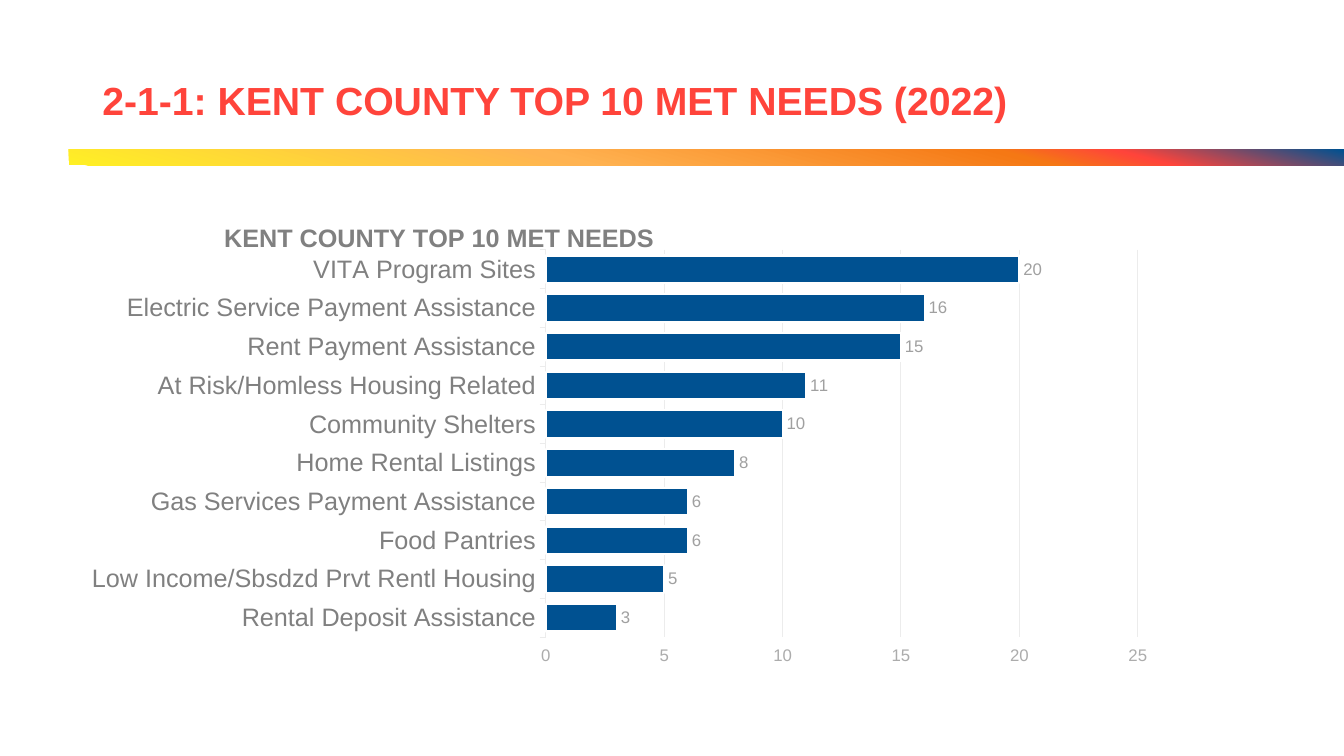
import pptx
import pptx.chart.data
import pptx.dml.color
import pptx.enum.chart
import pptx.enum.shapes
import pptx.enum.text
import pptx.oxml
import pptx.oxml.ns
import pptx.util

Pt = pptx.util.Pt
qn = pptx.oxml.ns.qn
COLORS = {
    "yellow": "FFF025", "peach": "FFB351", "orange": "F57814", "red": "FF443B",
    "blue": "005191", "gray": "808080", "label": "A0A0A0", "tick": "ACACAC",
    "grid": "ECECEC", "white": "FFFFFF",
}
NS = pptx.oxml.ns.nsdecls("a", "c")


def rgb(name):
    return pptx.dml.color.RGBColor.from_string(COLORS[name])


def set_font(font, size, color, bold=False):
    font.name = "Arial"
    font.size = Pt(size)
    font.bold = bold
    font.color.rgb = rgb(color)


prs = pptx.Presentation()
prs.slide_width, prs.slide_height = Pt(960), Pt(540)
s = prs.slides.add_slide(prs.slide_layouts[6])

# Gradient band
band = s.shapes.add_shape(pptx.enum.shapes.MSO_SHAPE.RECTANGLE,
                          Pt(49), Pt(107), Pt(911), Pt(11))
band.shadow.inherit = False
band.line.fill.background()
band.fill.gradient()
band.fill.gradient_angle = 75
gs_list = band._element.spPr.find(".//" + qn("a:gsLst"))
for gs in list(gs_list):
    gs_list.remove(gs)
for pos, color in [(0, "yellow"), (39, "peach"), (74, "orange"), (83, "red"), (100, "blue")]:
    gs_list.append(pptx.oxml.parse_xml(
        f'<a:gs {NS} pos="{pos * 1000}"><a:srgbClr val="{COLORS[color]}"/></a:gs>'))

# Slide title
title = s.shapes.add_textbox(Pt(66), Pt(29), Pt(894), Pt(88.5))
tf = title.text_frame
tf.word_wrap = True
tf.vertical_anchor = pptx.enum.text.MSO_ANCHOR.MIDDLE
p = tf.paragraphs[0]
p.text = "2-1-1: KENT COUNTY TOP 10 MET NEEDS (2022)"
p.line_spacing = 0.9
set_font(p.runs[0].font, 28, "red", True)

# Bar chart of met needs
needs = [
    ("Rental Deposit Assistance", 3),
    ("Low Income/Sbsdzd Prvt Rentl Housing", 5),
    ("Food Pantries", 6),
    ("Gas Services Payment Assistance", 6),
    ("Home Rental Listings", 8),
    ("Community Shelters", 10),
    ("At Risk/Homless Housing Related", 11),
    ("Rent Payment Assistance", 15),
    ("Electric Service Payment Assistance", 16),
    ("VITA Program Sites", 20),
]
data = pptx.chart.data.CategoryChartData()
data.categories = [need for need, count in needs]
data.add_series("Series 1", [count for need, count in needs])
chart = s.shapes.add_chart(pptx.enum.chart.XL_CHART_TYPE.BAR_CLUSTERED,
                           Pt(-33), Pt(141), Pt(863), Pt(341.5), data).chart
set_font(chart.font, 10, "gray")
chart.has_legend = False
chart.has_title = True
p = chart.chart_title.text_frame.paragraphs[0]
p.text = "KENT COUNTY TOP 10 MET NEEDS"
set_font(p.runs[0].font, 18, "gray", True)

plot = chart.plots[0]
plot.gap_width = 40
plot.vary_by_categories = False
bars = plot.series[0]
bars.format.fill.solid()
bars.format.fill.fore_color.rgb = rgb("blue")
bars.format.line.color.rgb = rgb("white")
bars.format.line.width = Pt(1.5)
labels = bars.data_labels
labels.show_value = True
labels.position = pptx.enum.chart.XL_LABEL_POSITION.OUTSIDE_END
set_font(labels.font, 12, "label")

cat_axis, val_axis = chart.category_axis, chart.value_axis
set_font(cat_axis.tick_labels.font, 18, "gray")
set_font(val_axis.tick_labels.font, 12, "tick")
val_axis.minimum_scale, val_axis.maximum_scale, val_axis.major_unit = 0, 25, 5
val_axis.has_major_gridlines = True
val_axis.format.line.fill.background()
for line in (cat_axis.format.line, val_axis.major_gridlines.format.line):
    line.color.rgb = rgb("grid")
    line.width = Pt(0.75)
for axis in (cat_axis, val_axis):
    axis.major_tick_mark = pptx.enum.chart.XL_TICK_MARK.OUTSIDE

# Manual placement of the chart title and the plot area, as fractions of the chart
chart_xml = chart._chartSpace.chart
for parent, index, target, sizes in [
    (chart_xml.find(qn("c:title")), 1, "", {"x": 0.22, "y": 0.04}),
    (chart_xml.find(qn("c:plotArea")), 0, '<c:layoutTarget val="inner"/>',
     {"x": 0.49, "y": 0.11, "w": 0.49, "h": 0.81}),
]:
    for old in parent.findall(qn("c:layout")):
        parent.remove(old)
    modes = "".join(f'<c:{k}Mode val="edge"/>' for k in "xy")
    values = "".join(f'<c:{k} val="{v}"/>' for k, v in sizes.items())
    parent.insert(index, pptx.oxml.parse_xml(
        f"<c:layout {NS}><c:manualLayout>{target}{modes}{values}</c:manualLayout></c:layout>"))

prs.save("out.pptx")
